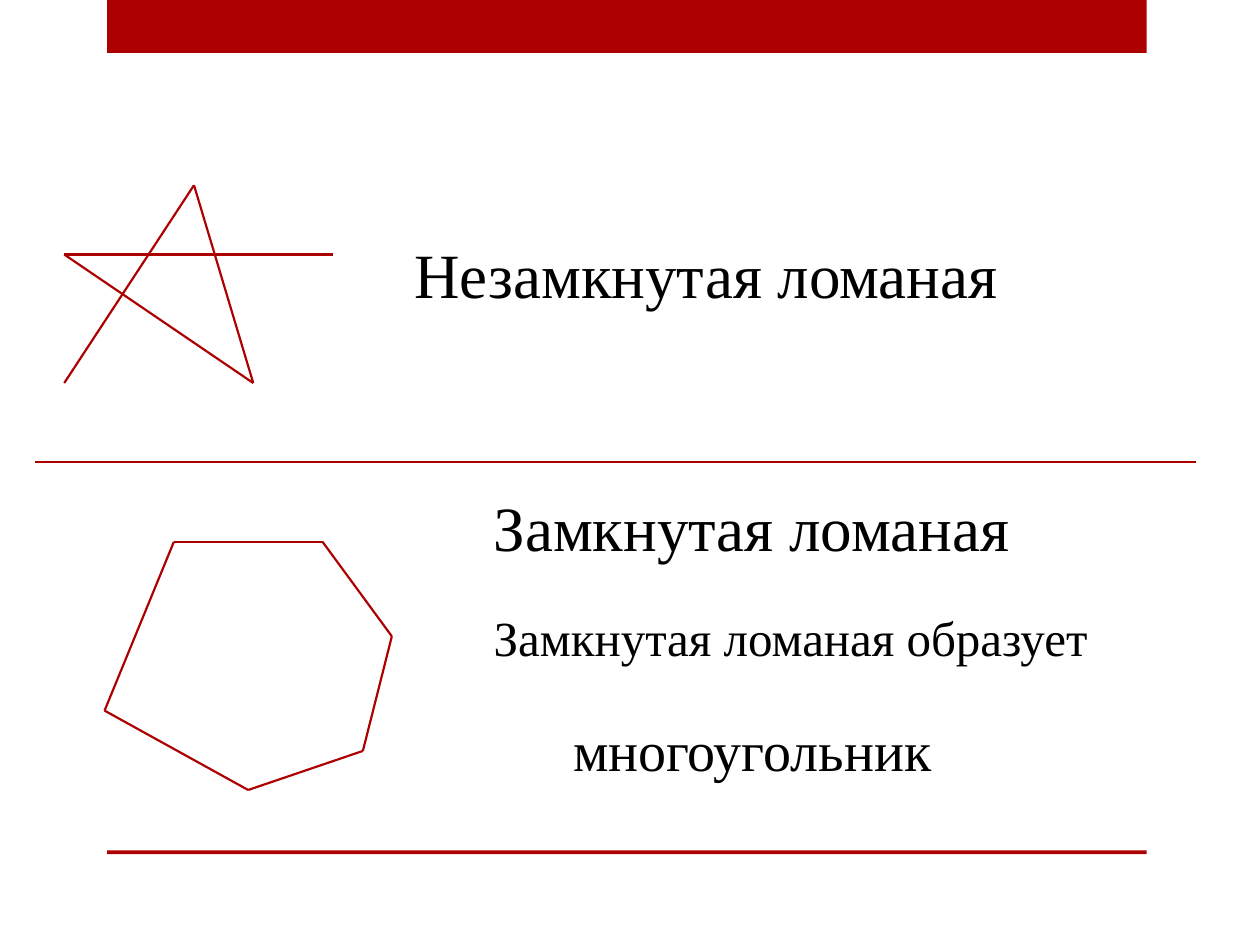
from itertools import pairwise

from pptx import Presentation
from pptx.dml.color import RGBColor
from pptx.enum.shapes import MSO_CONNECTOR, MSO_SHAPE
from pptx.enum.text import MSO_AUTO_SIZE
from pptx.oxml.ns import qn
from pptx.util import Pt
from lxml.etree import SubElement

PX = 9144  # 100 px to the inch
RED = RGBColor(0xAD, 0x01, 0x01)
BLACK = RGBColor(0, 0, 0)

deck = Presentation()
deck.slide_width, deck.slide_height = 1000 * PX, 750 * PX
page = deck.slides.add_slide(deck.slide_layouts[6])

# Red bars at the top and the bottom
for top, height in ((0, 42), (675, 3)):
    bar = page.shapes.add_shape(
        MSO_SHAPE.RECTANGLE, 85 * PX, top * PX, 825 * PX, height * PX)
    bar.shadow.inherit = False
    bar.fill.solid()
    bar.fill.fore_color.rgb = RED
    bar.line.fill.background()

# Divider, open polyline and closed polyline, each as a chain of points
divider = [(28, 367), (949, 367)]
open_polyline = [(51, 304), (154, 147), (201, 304), (51, 202), (264, 202)]
hexagon = [(83, 564), (138, 430), (256, 430), (311, 505), (288, 596), (197, 627)]
closed_polyline = hexagon + hexagon[:1]

for chain in (divider, open_polyline, closed_polyline):
    for (x1, y1), (x2, y2) in pairwise(chain):
        side = page.shapes.add_connector(
            MSO_CONNECTOR.STRAIGHT, x1 * PX, y1 * PX, x2 * PX, y2 * PX)
        side.line.color.rgb = RED
        side.line.width = Pt(1.25)
        SubElement(side._element.spPr, qn("a:effectLst"))

# Captions: text, left, top, width, height, size
captions = (
    ("Незамкнутая ломаная", 319, 182, 488, 71, 36),
    ("Замкнутая ломаная", 382, 383, 434, 71, 36),
    ("Замкнутая ломаная образует", 382, 477, 496, 57, 28),
    ("многоугольник", 445, 563, 307, 64, 32),
)
for text, left, top, width, height, size in captions:
    box = page.shapes.add_textbox(left * PX, top * PX, width * PX, height * PX)
    box.text_frame.word_wrap = False
    box.text_frame.auto_size = MSO_AUTO_SIZE.SHAPE_TO_FIT_TEXT
    span = box.text_frame.paragraphs[0].add_run()
    span.text = text
    span.font.name = "Times New Roman"
    span.font.size = Pt(size)
    span.font.color.rgb = BLACK

deck.save("out.pptx")
